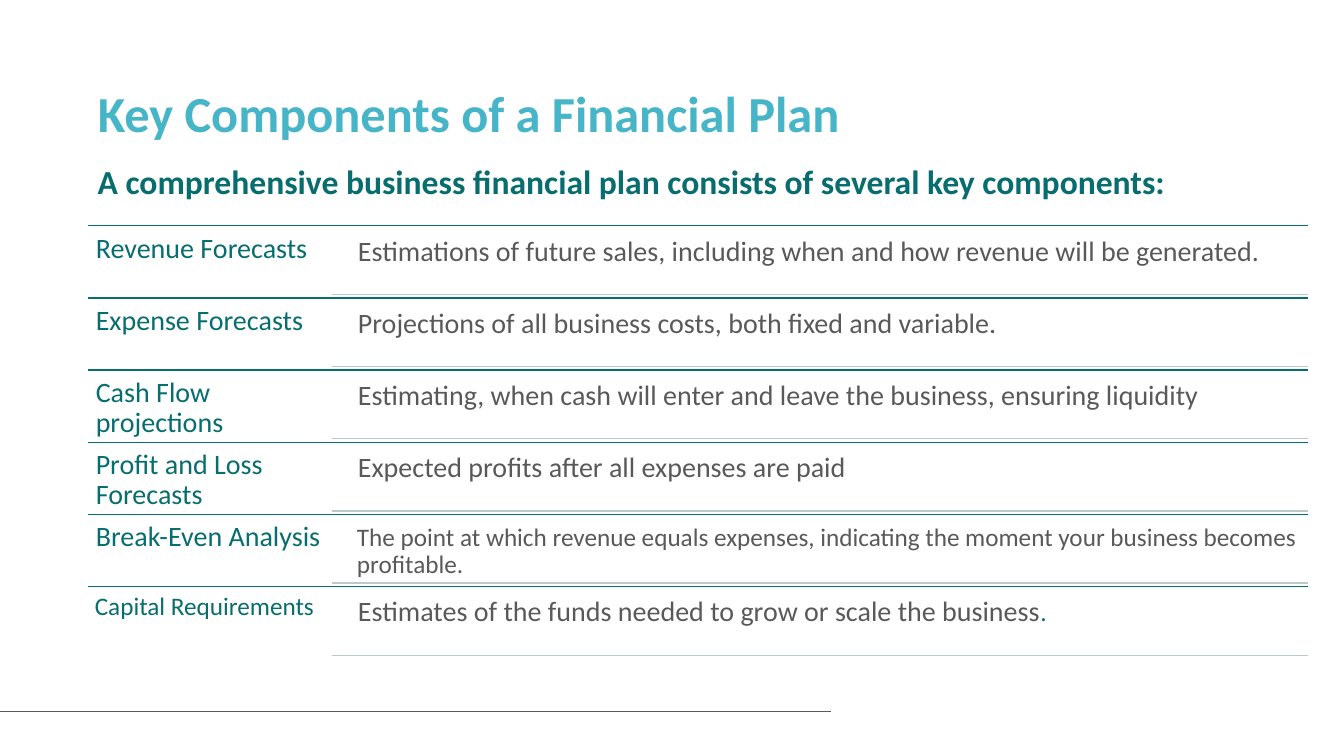
from lxml import etree
from pptx import Presentation
from pptx.dml.color import RGBColor
from pptx.enum import shapes, text
from pptx.oxml import ns
from pptx.util import Inches, Pt

COLORS = {"title": "47B5C8", "teal": "086D6E", "gray": "595959", "rule": "BDC8C8"}
FONT = "Calibri"
LEFT, RIGHT = 0.87, 12.97
LABEL_WIDTH = 2.42
DETAIL_LEFT, DETAIL_WIDTH, DETAIL_HEIGHT = 3.47, 9.49, 0.65
FIRST_ROW, ROW_HEIGHT = 2.24, 0.716

# label, label size, detail runs as (wording, size, color)
COMPONENTS = [
    ("Revenue Forecasts", 20,
     [("Estimations of future sales, including when and how revenue will be generated.", 20, "gray")]),
    ("Expense Forecasts", 20,
     [("Projections of all business costs, both fixed and variable.", 20, "gray")]),
    ("Cash Flow projections", 20,
     [("Estimating, when cash will enter and leave the business, ensuring liquidity", 20, "gray")]),
    ("Profit and Loss Forecasts", 20,
     [("Expected profits after all expenses are paid", 20, "gray")]),
    ("Break-Even Analysis", 20,
     [("The point at which revenue equals expenses, indicating the moment "
       "your business becomes profitable.", 18, "gray")]),
    ("Capital Requirements", 18,
     [("Estimates of the funds needed to grow or scale the business", 20, "gray"),
      (".", 18, "teal")]),
]


def add_rule(slide, left, right, top, color):
    rule = slide.shapes.add_connector(
        shapes.MSO_CONNECTOR.STRAIGHT, Inches(left), Inches(top), Inches(right), Inches(top))
    rule.line.color.rgb = RGBColor.from_string(COLORS[color])
    rule.line.width = Pt(1)
    etree.SubElement(rule._element.spPr, ns.qn("a:effectLst"))


def write_runs(frame, runs, bold=False, spacing=0.9):
    """Fill the first paragraph with (wording, size, color) runs, set top left."""
    frame.word_wrap = True
    frame.auto_size = text.MSO_AUTO_SIZE.NONE
    frame.vertical_anchor = text.MSO_ANCHOR.TOP
    paragraph = frame.paragraphs[0]
    paragraph.alignment = text.PP_ALIGN.LEFT
    paragraph.line_spacing = spacing
    for wording, size, color in runs:
        run = paragraph.add_run()
        run.text = wording
        run.font.name = FONT
        run.font.size = Pt(size)
        run.font.bold = bold
        run.font.color.rgb = RGBColor.from_string(COLORS[color])


def add_cell(slide, left, top, width, height, runs):
    frame = slide.shapes.add_textbox(
        Inches(left), Inches(top), Inches(width), Inches(height)).text_frame
    inset = Inches(0.08 if runs[0][1] == 20 else 0.07)
    frame.margin_left = frame.margin_right = inset
    frame.margin_top = frame.margin_bottom = inset
    write_runs(frame, runs)


def add_component(slide, top, label, label_size, detail):
    add_rule(slide, LEFT, RIGHT, top, "teal")
    add_cell(slide, LEFT, top, LABEL_WIDTH, ROW_HEIGHT, [(label, label_size, "teal")])
    detail_top = top + 0.03
    add_cell(slide, DETAIL_LEFT, detail_top, DETAIL_WIDTH, DETAIL_HEIGHT, detail)
    add_rule(slide, LEFT + LABEL_WIDTH, RIGHT, detail_top + DETAIL_HEIGHT, "rule")


def add_headings(slide):
    title = slide.shapes.title
    title.left, title.top = Inches(LEFT), Inches(0.83)
    title.width, title.height = Inches(11.61), Inches(0.88)
    write_runs(title.text_frame, [("Key Components of a Financial Plan", 36, "title")], bold=True)

    intro = slide.shapes.add_textbox(Inches(LEFT), Inches(1.55), Inches(12.09), Inches(0.5))
    write_runs(
        intro.text_frame,
        [("A comprehensive business financial plan consists of several key components:", 24, "teal")],
        bold=True, spacing=1.0)


def main():
    presentation = Presentation()
    presentation.slide_width = Inches(13.33)
    presentation.slide_height = Inches(7.5)
    slide = presentation.slides.add_slide(presentation.slide_layouts.get_by_name("Title Only"))

    add_rule(slide, 0, 8.24, 7.06, "gray")
    add_headings(slide)
    for row, component in enumerate(COMPONENTS):
        add_component(slide, FIRST_ROW + row * ROW_HEIGHT, *component)

    presentation.save("out.pptx")


if __name__ == "__main__":
    main()
